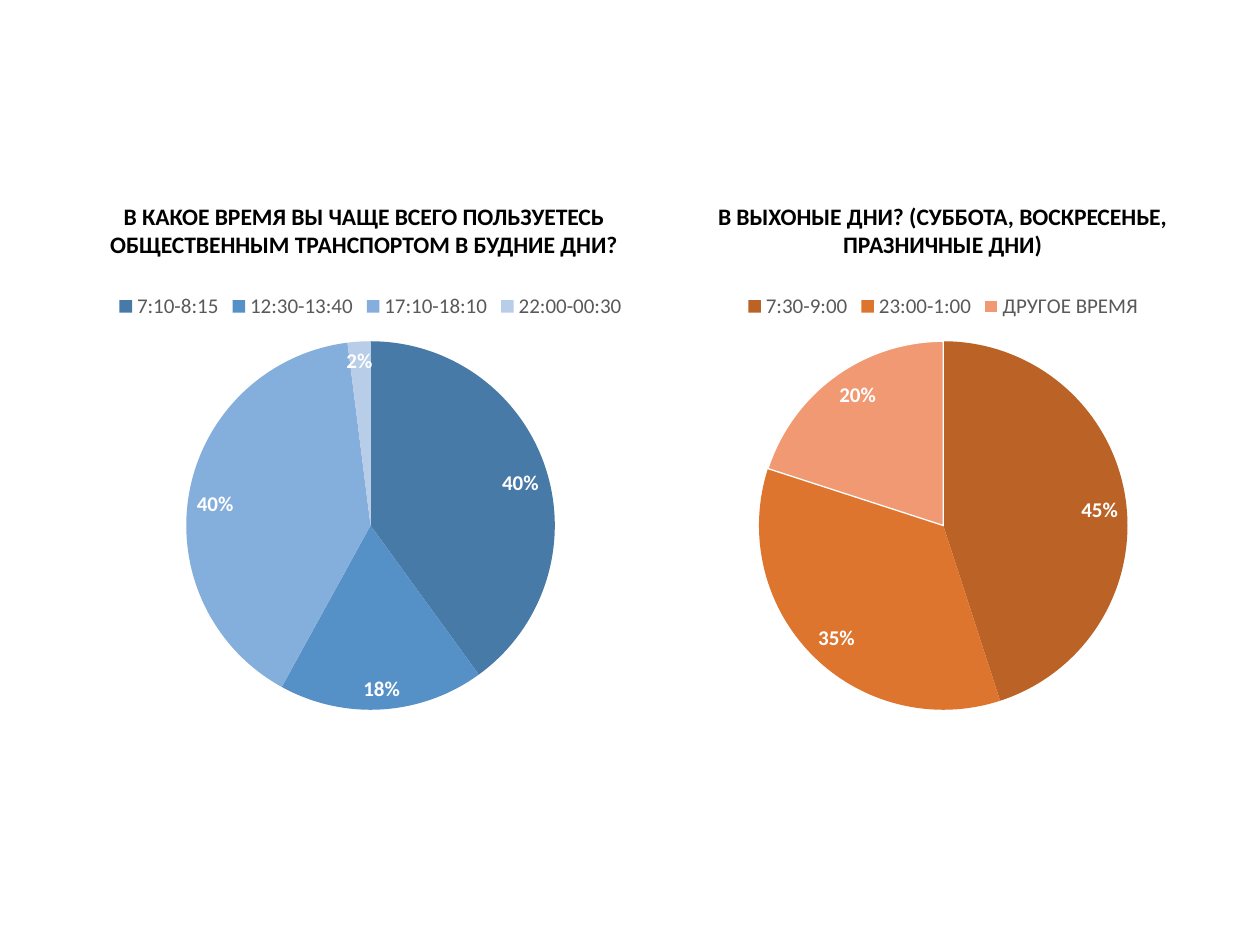
from pptx import Presentation
from pptx.chart.data import CategoryChartData
from pptx.dml.color import RGBColor
from pptx.enum.chart import XL_CHART_TYPE, XL_LABEL_POSITION, XL_LEGEND_POSITION
from pptx.enum.text import MSO_AUTO_SIZE, PP_ALIGN
from pptx.util import Cm, Pt

PIE = XL_CHART_TYPE.PIE
INSIDE_END = XL_LABEL_POSITION.INSIDE_END
LEGEND_TOP = XL_LEGEND_POSITION.TOP
FIT_SHAPE = MSO_AUTO_SIZE.SHAPE_TO_FIT_TEXT
CENTER = PP_ALIGN.CENTER

FONT = "Calibri"
BLACK = RGBColor(0x00, 0x00, 0x00)
GREY = RGBColor(0x59, 0x59, 0x59)
WHITE = RGBColor(0xFF, 0xFF, 0xFF)
BLUES = [RGBColor(0x48, 0x7A, 0xA8), RGBColor(0x55, 0x91, 0xC7),
         RGBColor(0x84, 0xAE, 0xDC), RGBColor(0xB8, 0xCD, 0xE8)]
ORANGES = [RGBColor(0xBB, 0x63, 0x27), RGBColor(0xDE, 0x75, 0x2E),
           RGBColor(0xF0, 0x99, 0x73)]

# Spans are (left, width) in centimetres
QUESTIONS = [
    {
        "title": "В ВЫХОНЫЕ ДНИ? (СУББОТА, ВОСКРЕСЕНЬЕ, ПРАЗНИЧНЫЕ ДНИ)",
        "title_span": (13.49, 11.02),
        "chart_span": (13.16, 11.71),
        "answers": {"7:30-9:00": 45, "23:00-1:00": 35, "ДРУГОЕ ВРЕМЯ": 20},
        "colors": ORANGES,
        "outlined": [2],
    },
    {
        "title": "В КАКОЕ ВРЕМЯ ВЫ ЧАЩЕ ВСЕГО ПОЛЬЗУЕТЕСЬ "
                 "ОБЩЕСТВЕННЫМ ТРАНСПОРТОМ В БУДНИЕ ДНИ?",
        "title_span": (0.97, 12.73),
        "chart_span": (0.97, 13),
        "answers": {"7:10-8:15": 40, "12:30-13:40": 18,
                    "17:10-18:10": 40, "22:00-00:30": 2},
        "colors": BLUES,
        "outlined": [],
    },
]
TITLE_TOP, TITLE_HEIGHT = 3.94, 1.42
CHART_TOP, CHART_HEIGHT = 5.64, 9.02


def style_font(font, size, color, bold=False):
    font.name = FONT
    font.size = Pt(size)
    font.bold = bold
    font.color.rgb = color


def add_title(page, question):
    left, width = question["title_span"]
    box = page.shapes.add_textbox(Cm(left), Cm(TITLE_TOP), Cm(width), Cm(TITLE_HEIGHT))
    box.text_frame.word_wrap = True
    box.text_frame.auto_size = FIT_SHAPE
    para = box.text_frame.paragraphs[0]
    para.alignment = CENTER
    span = para.add_run()
    span.text = question["title"]
    style_font(span.font, 13.5, BLACK, bold=True)


def add_pie(page, question):
    data = CategoryChartData()
    data.categories = list(question["answers"])
    data.add_series("Series 1", list(question["answers"].values()))
    left, width = question["chart_span"]
    chart = page.shapes.add_chart(PIE, Cm(left), Cm(CHART_TOP), Cm(width),
                                  Cm(CHART_HEIGHT), data).chart
    chart.has_title = False
    style_font(chart.font, 10, BLACK)

    chart.has_legend = True
    chart.legend.position = LEGEND_TOP
    chart.legend.include_in_layout = False
    style_font(chart.legend.font, 12, GREY)

    plot = chart.plots[0]
    plot.vary_by_categories = True
    plot.has_data_labels = True
    labels = plot.data_labels
    labels.show_value = False
    labels.show_percentage = True
    labels.number_format = "0%"
    labels.number_format_is_linked = False
    labels.position = INSIDE_END
    style_font(labels.font, 12, WHITE, bold=True)

    for index, color in enumerate(question["colors"]):
        slice_format = plot.series[0].points[index].format
        slice_format.fill.solid()
        slice_format.fill.fore_color.rgb = color
        if index in question["outlined"]:
            slice_format.line.color.rgb = WHITE
            slice_format.line.width = Pt(0.75)
        else:
            slice_format.line.fill.background()


def main():
    deck = Presentation()
    deck.slide_width, deck.slide_height = Cm(25.4), Cm(19.05)
    blank_layout = deck.slide_layouts[6]
    page = deck.slides.add_slide(blank_layout)
    for question in QUESTIONS:
        add_title(page, question)
        add_pie(page, question)
    deck.save("out.pptx")


if __name__ == "__main__":
    main()
